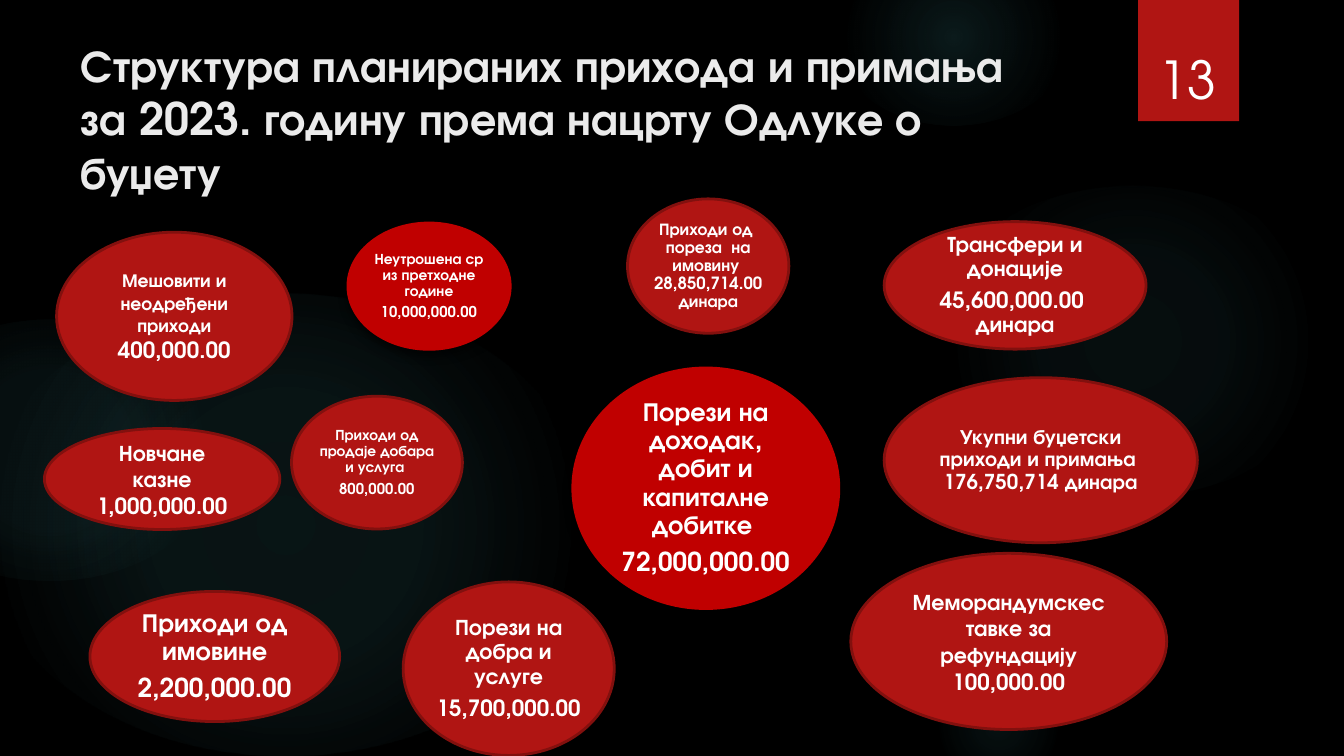
from dataclasses import dataclass

from lxml.etree import SubElement
from pptx import Presentation
from pptx.dml.color import RGBColor
from pptx.enum.shapes import MSO_SHAPE
from pptx.enum.text import MSO_ANCHOR, MSO_AUTO_SIZE, PP_ALIGN
from pptx.oxml import parse_xml
from pptx.oxml.ns import nsdecls, qn
from pptx.util import Cm, Pt

FONT = "TeX Gyre Adventor"
BLACK = RGBColor(0x00, 0x00, 0x00)
WHITE = RGBColor(0xFF, 0xFF, 0xFF)
TITLE_GREY = RGBColor(0xEB, 0xEB, 0xEB)
RED = RGBColor(0xB0, 0x15, 0x13)
DARK_RED = RGBColor(0x82, 0x10, 0x0E)
BRIGHT_RED = RGBColor(0xC0, 0x00, 0x00)
TEAL = RGBColor(0x50, 0xB9, 0xC1)


@dataclass(frozen=True)
class Box:
    """Position and size in centimetres."""
    left: float
    top: float
    width: float
    height: float

    def lengths(self) -> tuple:
        return Cm(self.left), Cm(self.top), Cm(self.width), Cm(self.height)


@dataclass(frozen=True)
class Glow:
    """A soft background light, always 4:3; stops are (position %, opacity %)."""
    left: float
    top: float
    width: float
    stops: tuple


@dataclass(frozen=True)
class Bubble:
    """One revenue item; tight bubbles have small margins and line spacing."""
    box: Box
    size: int
    lines: tuple
    bright: bool = False
    tight: bool = True
    amount: str = ""  # larger run that ends the last paragraph


GLOWS = (
    Glow(17.5, 3.51, 7.82, ((0, 7), (36, 6), (69, 0))),
    Glow(15.8, -0.97, 4.45, ((0, 14), (36, 7), (73, 0))),
    Glow(17.5, 12.7, 2.74, ((0, 9), (36, 5), (66, 0))),
    Glow(-0.43, 5.56, 11.63, ((0, 11), (36, 10), (75, 0))),
    Glow(-2.34, 6.05, 6.55, ((0, 8), (36, 8), (72, 0))),
)

BUBBLES = (
    Bubble(Box(16.71, 7.14, 5.92, 3.12), 11,
           ("Укупни буџетски приходи и примања  176,750,714 динара",)),
    Bubble(Box(11.86, 3.76, 3.05, 2.54), 9,
           ("Приходи од  пореза  на имовину  28,850,714.00 динара",)),
    Bubble(Box(16.71, 4.19, 4.95, 2.41), 12,
           ("Трансфери и донације", "45,600,000.00  динара")),
    Bubble(Box(7.62, 11, 3.99, 3.28), 12,
           ("Порези на добра и услуге", "15,700,000.00")),
    Bubble(Box(5.51, 7.49, 3.23, 2.51), 8,
           ("Приходи од продаје добара и услуга ", "800,000.00")),
    Bubble(Box(1.7, 11.18, 4.72, 2.46), 14,
           ("Приходи од имовине", "2,200,000.00")),
    Bubble(Box(10.8, 6.93, 5.08, 4.6), 14,
           ("Порези на доходак, добит и капиталне добитке ", "72,000,000.00"),
           bright=True),
    Bubble(Box(6.55, 4.19, 3.12, 2.44), 8,
           ("Неутрошена ср из претходне године", "10,000,000.00"), bright=True),
    Bubble(Box(16.08, 10.46, 5.97, 3.33), 12,
           ("Меморандумскеставке за рефундацију 100,000.00",), tight=False),
    Bubble(Box(0.84, 8.1, 4.45, 1.91), 12,
           ("Новчане казне", "1,000,000.00"), tight=False),
    Bubble(Box(1.07, 4.39, 4.45, 3.18), 10,
           ("Мешовити и неодређени приходи ",), tight=False, amount="400,000.00"),
)


def add_plain(slide, kind, box: Box):
    s = slide.shapes.add_shape(kind, *box.lengths())
    s.shadow.inherit = False
    s.line.fill.background()
    return s


def add_shadow(s, opacity: int, blur: float, distance: float) -> None:
    """Drop a black shadow straight down."""
    effects = s.element.spPr.find(qn("a:effectLst"))
    shadow = SubElement(effects, qn("a:outerShdw"), blurRad=str(Pt(blur)),
                        dist=str(Pt(distance)), dir="5400000", rotWithShape="0")
    color = SubElement(shadow, qn("a:srgbClr"), val=str(BLACK))
    SubElement(color, qn("a:alpha"), val=str(opacity * 1000))


def add_glow(slide, glow: Glow) -> None:
    box = Box(glow.left, glow.top, glow.width, glow.width * 0.75)
    s = add_plain(slide, MSO_SHAPE.OVAL, box)
    stops = "".join(
        f'<a:gs pos="{pos * 1000}"><a:srgbClr val="{TEAL}">'
        f'<a:alpha val="{opacity * 1000}"/></a:srgbClr></a:gs>'
        for pos, opacity in glow.stops)
    s.element.spPr.find(qn("a:prstGeom")).addnext(parse_xml(
        f'<a:gradFill {nsdecls("a")} rotWithShape="1"><a:gsLst>{stops}</a:gsLst>'
        '<a:path path="circle"><a:fillToRect l="50000" t="50000" r="50000" b="50000"/>'
        '</a:path></a:gradFill>'))


def set_font(font, size: float, color: RGBColor, bold: bool) -> None:
    font.name = FONT
    font.size = Pt(size)
    font.bold = bold
    font.color.rgb = color


def add_bubble(slide, bubble: Bubble) -> None:
    s = add_plain(slide, MSO_SHAPE.OVAL, bubble.box)
    s.fill.solid()
    s.fill.fore_color.rgb = BRIGHT_RED if bubble.bright else RED
    if bubble.bright:
        add_shadow(s, 60, 5, 3)
    else:
        s.line.color.rgb = DARK_RED
        s.line.width = Pt(1.5)

    tf = s.text_frame
    tf.word_wrap = True
    tf.vertical_anchor = MSO_ANCHOR.MIDDLE
    if bubble.tight:
        margin = Cm(0.04)
        tf.margin_left = tf.margin_right = tf.margin_top = tf.margin_bottom = margin
    tf.text = "\n".join(bubble.lines)
    for p in tf.paragraphs:
        p.alignment = PP_ALIGN.CENTER
        set_font(p.font, bubble.size, WHITE, True)
        if bubble.tight:
            p.line_spacing = 0.9
            p.space_after = Pt(round(bubble.size * 0.35, 1))
    if bubble.amount:
        r = tf.paragraphs[-1].add_run()
        r.text = bubble.amount
        r.font.size = Pt(12)


def set_title(slide, text: str, box: Box) -> None:
    title = slide.shapes.title
    title.left, title.top, title.width, title.height = box.lengths()
    title.element.getparent().append(title.element)  # in front of the glows
    tf = title.text_frame
    tf.text = text
    tf.word_wrap = True
    tf.auto_size = MSO_AUTO_SIZE.NONE
    tf.vertical_anchor = MSO_ANCHOR.TOP
    p = tf.paragraphs[0]
    p.alignment = PP_ALIGN.LEFT
    set_font(p.font, 24, TITLE_GREY, True)


def add_slide_number(slide, number: str) -> None:
    tag = add_plain(slide, MSO_SHAPE.RECTANGLE, Box(21.51, 0, 1.91, 2.29))
    tag.fill.solid()
    tag.fill.fore_color.rgb = RED
    add_shadow(tag, 45, 3, 2)
    tf = slide.shapes.add_textbox(*Box(21.56, 0.61, 1.75, 1.6).lengths()).text_frame
    tf.word_wrap = True
    tf.vertical_anchor = MSO_ANCHOR.BOTTOM
    p = tf.paragraphs[0]
    p.text = number
    p.alignment = PP_ALIGN.CENTER
    set_font(p.font, 28, WHITE, False)


def main() -> None:
    prs = Presentation()
    prs.slide_width, prs.slide_height = Cm(25.4), Cm(14.29)
    slide = prs.slides.add_slide(prs.slide_layouts[5])

    # Background
    slide.background.fill.solid()
    slide.background.fill.fore_color.rgb = BLACK
    for glow in GLOWS:
        add_glow(slide, glow)

    # Heading
    set_title(slide, "Структура планираних прихода и примања\v"
                     "за 2023. годину према нацрту Одлуке о\vбуџету",
              Box(1.27, 0.58, 22.86, 1.63))
    add_slide_number(slide, "13")

    # Revenue items
    for bubble in BUBBLES:
        add_bubble(slide, bubble)

    prs.save("out.pptx")


if __name__ == "__main__":
    main()
